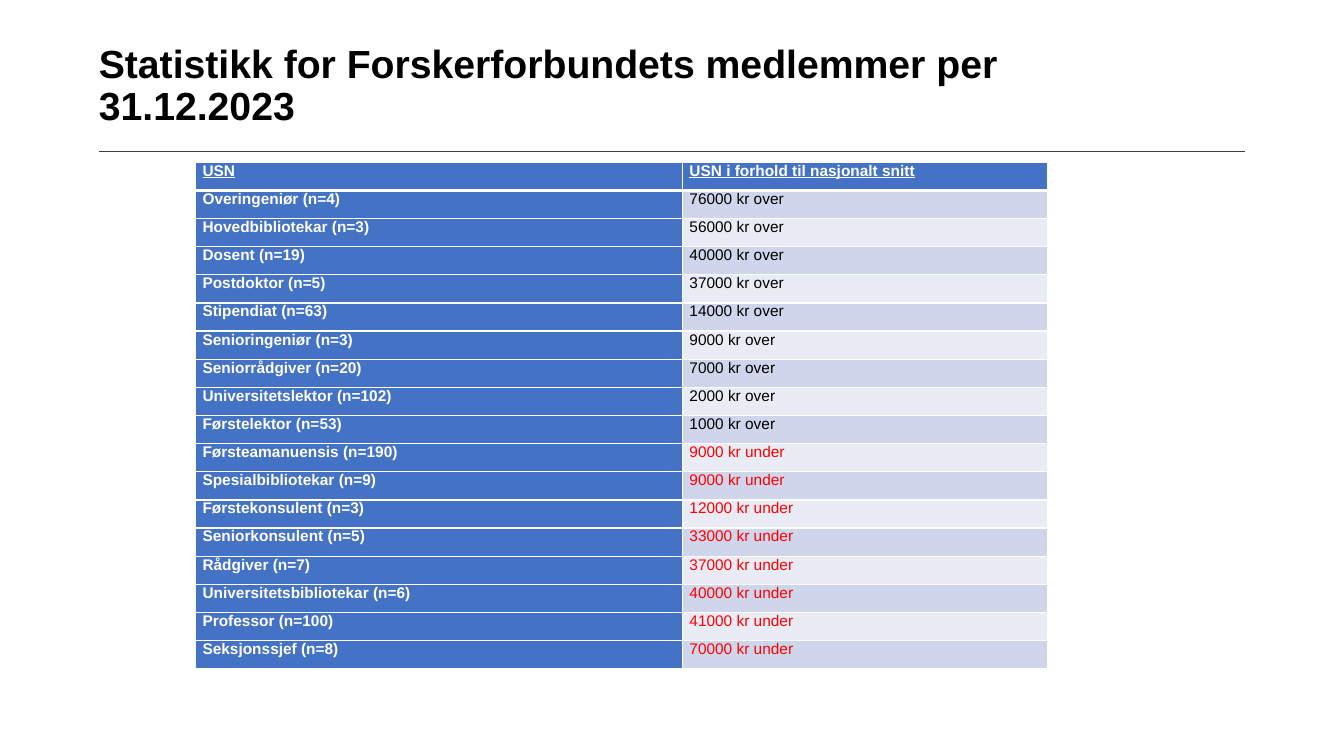
import pptx
import pptx.dml.color
import pptx.enum.text
import pptx.oxml
import pptx.oxml.ns
import pptx.util

Pt = pptx.util.Pt
RGB = pptx.dml.color.RGBColor

BLACK = RGB(0x00, 0x00, 0x00)
WHITE = RGB(0xFF, 0xFF, 0xFF)
RED = RGB(0xFF, 0x00, 0x00)
GREY = RGB(0x3E, 0x3F, 0x3E)
BLUE = RGB(0x44, 0x72, 0xC4)
BANDS = (RGB(0xE9, 0xEB, 0xF5), RGB(0xCF, 0xD5, 0xEA))

HEADS = ("USN", "USN i forhold til nasjonalt snitt")
ROWS = [
    ("Overingeniør (n=4)", "76000 kr over"),
    ("Hovedbibliotekar (n=3)", "56000 kr over"),
    ("Dosent (n=19)", "40000 kr over"),
    ("Postdoktor (n=5)", "37000 kr over"),
    ("Stipendiat (n=63)", "14000 kr over"),
    ("Senioringeniør (n=3)", "9000 kr over"),
    ("Seniorrådgiver (n=20)", "7000 kr over"),
    ("Universitetslektor (n=102)", "2000 kr over"),
    ("Førstelektor (n=53)", "1000 kr over"),
    ("Førsteamanuensis (n=190)", "9000 kr under"),
    ("Spesialbibliotekar (n=9)", "9000 kr under"),
    ("Førstekonsulent (n=3)", "12000 kr under"),
    ("Seniorkonsulent (n=5)", "33000 kr under"),
    ("Rådgiver (n=7)", "37000 kr under"),
    ("Universitetsbibliotekar (n=6)", "40000 kr under"),
    ("Professor (n=100)", "41000 kr under"),
    ("Seksjonssjef (n=8)", "70000 kr under"),
]


def add_run(para, text, size, color, bold=False, under=False):
    run = para.add_run()
    run.text = text
    font = run.font
    font.name = "Arial"
    font.size = Pt(size)
    font.color.rgb = color
    font.bold = bold
    font.underline = under


def set_title(slide, text):
    title = slide.shapes.title
    title.left, title.top = Pt(70.6), Pt(31.7)
    title.width, title.height = Pt(715.7), Pt(70.6)
    frame = title.text_frame
    frame.word_wrap = True
    frame.auto_size = pptx.enum.text.MSO_AUTO_SIZE.NONE
    frame.vertical_anchor = pptx.enum.text.MSO_ANCHOR.TOP
    frame.margin_left = frame.margin_right = 0
    frame.margin_top = frame.margin_bottom = 0
    para = frame.paragraphs[0]
    para.alignment = pptx.enum.text.PP_ALIGN.LEFT
    para.line_spacing = 0.9
    add_run(para, text, 28, BLACK, bold=True)


def add_rule(slide, left, right, y):
    rule = slide.shapes.add_connector(
        pptx.enum.shapes.MSO_CONNECTOR.STRAIGHT, Pt(left), Pt(y), Pt(right), Pt(y))
    rule.line.color.rgb = GREY
    rule.line.width = Pt(1)
    props = rule._element.spPr
    props.append(pptx.oxml.parse_xml(
        f'<a:effectLst {pptx.oxml.ns.nsdecls("a")}/>'))


def set_edges(cell, base):
    props = cell._tc.get_or_add_tcPr()
    for side, width in (("L", 1), ("R", 1), ("T", 1), ("B", base)):
        props.append(pptx.oxml.parse_xml(
            f'<a:ln{side} {pptx.oxml.ns.nsdecls("a")} w="{Pt(width)}">'
            f'<a:solidFill><a:srgbClr val="{WHITE}"/></a:solidFill></a:ln{side}>'))


def fill_cell(cell, text, fill, color, bold=False, head=False):
    set_edges(cell, 3 if head else 1)
    cell.fill.solid()
    cell.fill.fore_color.rgb = fill
    cell.margin_left = cell.margin_right = Pt(5)
    cell.margin_top = cell.margin_bottom = 0
    add_run(cell.text_frame.paragraphs[0], text, 11, color, bold, head)


def add_stats(slide):
    count = len(ROWS) + 1
    high = 20.12
    table = slide.shapes.add_table(
        count, 2, Pt(139.7), Pt(115.9), Pt(608.4), Pt(high * count)).table
    for col, width in zip(table.columns, (347.8, 260.6)):
        col.width = Pt(width)
    for row in table.rows:
        row.height = Pt(high)
    # Header row
    for col, text in enumerate(HEADS):
        fill_cell(table.cell(0, col), text, BLUE, WHITE, bold=True, head=True)
    # Job groups, with pay below the average in red
    for row, (job, gap) in enumerate(ROWS, 1):
        fill_cell(table.cell(row, 0), job, BLUE, WHITE, bold=True)
        color = RED if gap.endswith("under") else BLACK
        fill_cell(table.cell(row, 1), gap, BANDS[row % 2], color)


def main():
    deck = pptx.Presentation()
    deck.slide_width, deck.slide_height = Pt(960), Pt(540)
    slide = deck.slides.add_slide(deck.slide_layouts[5])
    # Heading and rule
    set_title(slide, "Statistikk for Forskerforbundets medlemmer per 31.12.2023")
    add_rule(slide, 70.6, 889.2, 108)
    # Pay table
    add_stats(slide)
    deck.save("out.pptx")


if __name__ == "__main__":
    main()
